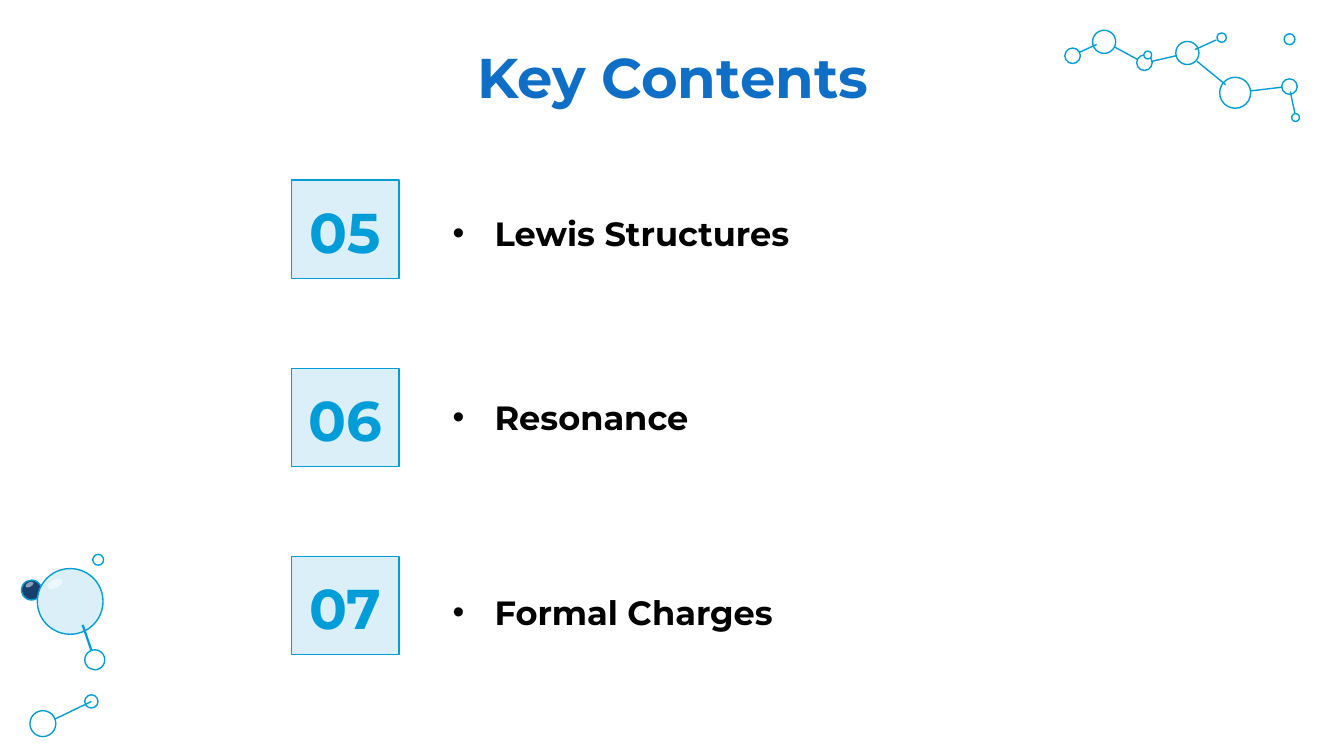
from lxml import etree
from pptx import Presentation
from pptx.dml.color import RGBColor
from pptx.enum.shapes import MSO_CONNECTOR, MSO_SHAPE
from pptx.enum.text import MSO_ANCHOR, MSO_AUTO_SIZE, PP_ALIGN
from pptx.oxml.ns import qn
from pptx.util import Pt

OVAL, RECTANGLE = MSO_SHAPE.OVAL, MSO_SHAPE.RECTANGLE
STRAIGHT = MSO_CONNECTOR.STRAIGHT
TOP, BOTTOM = MSO_ANCHOR.TOP, MSO_ANCHOR.BOTTOM
LEFT, CENTER = PP_ALIGN.LEFT, PP_ALIGN.CENTER

COLORS = {"title": "0F6FC6", "cyan": "009DD9", "pale": "DBEFF9",
          "navy": "17406D", "white": "FFFFFF", "black": "000000"}
FONT = "Montserrat"
INSET = 7.2
BULLET_INDENT = 22.5

# Number, label, label offset from the top of its badge, label height
ITEMS = [("05", "Lewis Structures", 7.2, 42.5),
         ("06", "Resonance", 5, 42.5),
         ("07", "Formal Charges", 8.6, 36)]

# Atoms: centre x, centre y, diameter, fill. Bonds: x1, y1, x2, y2, width.
CHAIN_ATOMS = [(4.6, 13.9, 8.3, "white"), (21.5, 6.4, 12.4, "white"),
               (43.1, 17.6, 8.3, "white"), (44.9, 13.5, 4.2, "white"),
               (66.1, 12.4, 12.4, "white"), (84.5, 4.2, 5, "white"),
               (91.7, 33.7, 16.6, "white"), (120.8, 30.4, 8.3, "white"),
               (124.1, 47, 4.2, "white"), (120.8, 5, 5.8, "white")]
CHAIN_BONDS = [(17.5, 7.8, 8.2, 12.1, 0.75), (27.2, 9.2, 39.1, 15.7, 0.75),
               (47, 16.9, 60, 13.9, 0.75), (70.1, 10.6, 81.6, 5.4, 0.75),
               (71.2, 16.8, 86.6, 29.4, 0.75), (100, 32.7, 116.9, 30.7, 0.75),
               (121.2, 33, 123.7, 44.8, 0.75)]
CLUSTER_ATOMS = [(12, 91.7, 13.9, "white"), (38, 79.8, 7.1, "white"),
                 (5.9, 20.1, 10.7, "navy"), (26.6, 26.2, 35.2, "pale"),
                 (41.6, 3.9, 5.8, "white"), (39.8, 57.5, 10.7, "white")]
CLUSTER_BONDS = [(18.5, 89.2, 38, 79.8, 0.75), (33.3, 38.8, 38, 52.5, 1.2)]
# Glints: centre x, centre y, width, height
CLUSTER_GLINTS = [(4.8, 17.2, 4.6, 2.4), (18.5, 16.8, 9, 4.4)]


def rgb(name):
    return RGBColor.from_string(COLORS[name])


def add_filled(slide, kind, left, top, width, height, fill, line=None):
    shape = slide.shapes.add_shape(kind, Pt(left), Pt(top), Pt(width), Pt(height))
    shape.shadow.inherit = False
    shape.fill.solid()
    shape.fill.fore_color.rgb = rgb(fill)
    if line:
        shape.line.color.rgb = rgb(line)
        shape.line.width = Pt(0.75)
    else:
        shape.line.fill.background()
    return shape


def write_text(shape, text, size, color, align, anchor=TOP):
    frame = shape.text_frame
    frame.word_wrap = True
    frame.auto_size = MSO_AUTO_SIZE.NONE
    frame.vertical_anchor = anchor
    frame.margin_left = frame.margin_right = Pt(INSET)
    frame.margin_top = frame.margin_bottom = Pt(INSET)
    paragraph = frame.paragraphs[0]
    paragraph.text = text
    paragraph.alignment = align
    paragraph.line_spacing = 1.0
    font = paragraph.font
    font.name, font.size, font.bold = FONT, Pt(size), True
    font.color.rgb = rgb(color)
    return paragraph


def add_bullet(paragraph):
    paragraph.line_spacing = 1.15
    properties = paragraph._p.get_or_add_pPr()
    properties.set("marL", str(Pt(BULLET_INDENT)))
    properties.set("indent", str(-Pt(BULLET_INDENT)))
    font = etree.Element(qn("a:buFont"), typeface="Arial")
    bullet = etree.Element(qn("a:buChar"), char="•")
    properties.find(qn("a:lnSpc")).addnext(font)
    font.addnext(bullet)


def add_title(slide, left, top, width, height):
    title = slide.shapes.title
    title.left, title.top = Pt(left), Pt(top)
    title.width, title.height = Pt(width), Pt(height)
    write_text(title, "Key Contents", 30, "title", CENTER)


def add_molecule(slide, left, top, atoms, bonds, glints=()):
    for x, y, diameter, fill in atoms:
        add_filled(slide, OVAL, left + x - diameter / 2, top + y - diameter / 2,
                   diameter, diameter, fill, "cyan")
    for x, y, width, height in glints:
        glint = add_filled(slide, OVAL, left + x - width / 2, top + y - height / 2,
                           width, height, "white")
        glint.rotation = -27
        color = glint.fill._xPr.find(qn("a:solidFill"))[0]
        etree.SubElement(color, qn("a:alpha"), val="50000")
    for x1, y1, x2, y2, width in bonds:
        bond = slide.shapes.add_connector(STRAIGHT, Pt(left + x1), Pt(top + y1),
                                          Pt(left + x2), Pt(top + y2))
        bond.line.color.rgb = rgb("cyan")
        bond.line.width = Pt(width)
        etree.SubElement(bond._element.spPr, qn("a:effectLst"))


def add_contents(slide, left, top, pitch):
    """Numbered badges, each with a bulleted label to its right."""
    for index, (number, label, offset, height) in enumerate(ITEMS):
        row_top = top + index * pitch
        badge = add_filled(slide, RECTANGLE, left, row_top, 57.6, 52.6, "pale", "cyan")
        write_text(badge, number, 30, "cyan", CENTER, BOTTOM)
        box = slide.shapes.add_textbox(Pt(left + 79.2), Pt(row_top + offset),
                                       Pt(249), Pt(height))
        add_bullet(write_text(box, label, 18, "black", LEFT))


def main():
    presentation = Presentation()
    presentation.slide_width, presentation.slide_height = Pt(720), Pt(405)
    slide = presentation.slides.add_slide(presentation.slide_layouts[5])
    add_molecule(slide, 11, 296, CLUSTER_ATOMS, CLUSTER_BONDS, CLUSTER_GLINTS)
    add_molecule(slide, 570, 16, CHAIN_ATOMS, CHAIN_BONDS)
    add_title(slide, 56.9, 15.8, 607, 45.4)
    add_contents(slide, 156.2, 96.5, 100.8)
    presentation.save("out.pptx")


if __name__ == "__main__":
    main()
